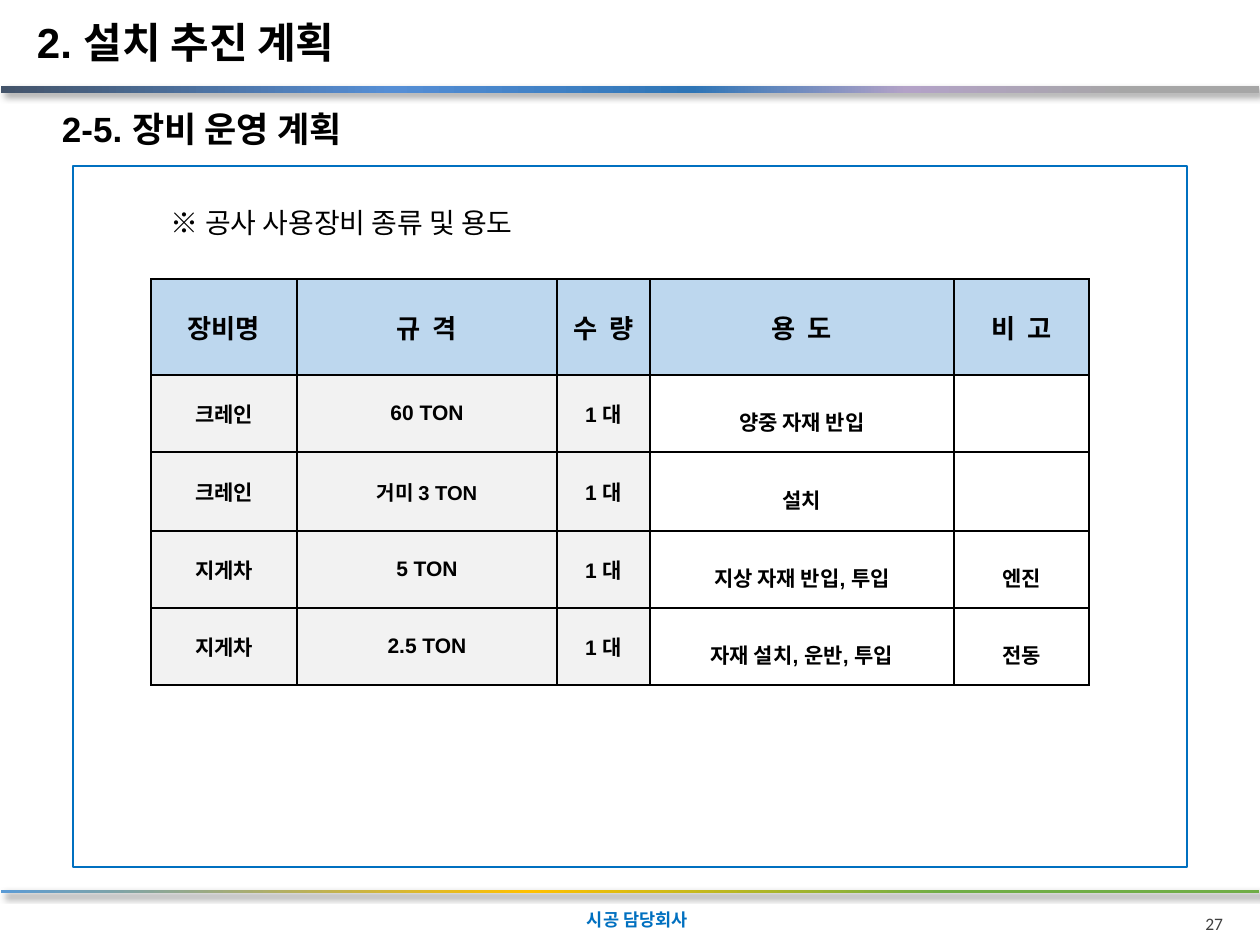
"""Build the equipment operation plan slide."""
from lxml import etree
from pptx import Presentation
from pptx import util as u
from pptx.dml.color import RGBColor
from pptx.enum import shapes, text
from pptx.oxml.ns import qn

SCALE = 914400 / 126
KOREAN = "Noto Sans CJK KR"
COLORS = {
    "black": "000000", "blue": "0070C0", "gray": "404040",
    "header": "BDD7EE", "label": "F2F2F2", "plain": "FFFFFF",
}
BARS = [
    ((1, 86, 1258, 7), [(0, "44546A"), (31, "558ED5"), (55, "2E75B6"), (72, "B3A2C7"), (90, "A6A6A6")]),
    ((1, 890, 1258, 3), [(0, "5B9BD5"), (42, "FFC000"), (75, "70AD47")]),
]
FRAME = (73, 166, 1114, 701)
MIDDLE, TOP = text.MSO_ANCHOR.MIDDLE, text.MSO_ANCHOR.TOP
LEFT, CENTER, RIGHT = text.PP_ALIGN.LEFT, text.PP_ALIGN.CENTER, text.PP_ALIGN.RIGHT
LABELS = [
    {"words": "시공 담당회사", "box": (583, 900, 275, 40), "size": 10, "font": KOREAN,
     "color": "blue", "bold": True, "anchor": MIDDLE, "inset": (4, 4)},
    {"words": "2. 설치 추진 계획", "box": (24, 0, 464, 84), "size": 24, "bold": True,
     "anchor": MIDDLE, "wrap": False},
    {"words": "2-5. 장비 운영 계획", "box": (49, 101, 339, 55), "size": 20, "bold": True,
     "wrap": False},
    {"words": "27", "box": (1076, 907, 160, 27), "size": 10, "font": "Calibri",
     "color": "gray", "align": RIGHT},
    {"words": "※ 공사 사용장비 종류 및 용도", "box": (151, 199, 591, 47), "size": 16,
     "inset": (20, 6)},
]
TABLE_LEFT, TABLE_TOP = 151, 279
COLUMNS = [146, 260, 93, 304, 135]
ROWS = [96, 77, 79, 77, 77]
EQUIPMENT = [
    ("장비명", "규  격", "수  량", "용  도", "비  고"),
    ("크레인", "60 TON", "1 대", "양중 자재 반입", ""),
    ("크레인", "거미 3 TON", "1 대", "설치", ""),
    ("지게차", "5 TON", "1 대", "지상 자재 반입, 투입", "엔진"),
    ("지게차", "2.5 TON", "1 대", "자재 설치, 운반, 투입", "전동"),
]
SIZES = {"거미 3 TON": 11.5}


def px(value):
    return u.Emu(round(value * SCALE))


def place(box):
    return [px(value) for value in box]


def add_color(parent, color):
    return etree.SubElement(parent, qn("a:srgbClr"), val=color)


def style(paragraph, size, font="Arial", color="black", bold=False):
    for run in paragraph.runs:
        run.font.size = u.Pt(size)
        run.font.bold = bold
        run.font.name = font
        run.font.color.rgb = RGBColor.from_string(COLORS[color])
        etree.SubElement(run.font._element, qn("a:ea"), typeface=KOREAN)


def add_label(slide, words, box, size, font="Arial", color="black", bold=False,
              anchor=TOP, align=LEFT, wrap=True, inset=(13, 6)):
    frame = slide.shapes.add_textbox(*place(box)).text_frame
    frame.text = words
    frame.word_wrap = wrap
    frame.vertical_anchor = anchor
    frame.margin_left, frame.margin_top = place(inset)
    frame.margin_right, frame.margin_bottom = px(min(inset[0], 13)), px(inset[1])
    frame.paragraphs[0].alignment = align
    style(frame.paragraphs[0], size, font, color, bold)


def add_rectangle(slide, box):
    shape = slide.shapes.add_shape(shapes.MSO_SHAPE.RECTANGLE, *place(box))
    shape.shadow.inherit = False
    return shape


def add_bar(slide, box, stops):
    shape = add_rectangle(slide, box)
    shape.line.fill.background()
    shape.fill.gradient()
    shape.fill.gradient_angle = 0
    properties = shape._element.spPr
    stop_list = properties.find(".//" + qn("a:gsLst"))
    for stop in list(stop_list):
        stop_list.remove(stop)
    for position, color in stops:
        add_color(etree.SubElement(stop_list, qn("a:gs"), pos=str(position * 1000)), color)
    shadow = etree.SubElement(
        properties.find(qn("a:effectLst")), qn("a:outerShdw"), blurRad=str(u.Pt(4)),
        dist=str(u.Pt(3)), dir="2700000", algn="tl", rotWithShape="0")
    etree.SubElement(add_color(shadow, COLORS["black"]), qn("a:alpha"), val="40000")


def add_borders(cell):
    properties = cell._tc.get_or_add_tcPr()
    for index, side in enumerate(("lnL", "lnR", "lnT", "lnB")):
        line = etree.Element(qn("a:" + side), w=str(u.Pt(1)))
        add_color(etree.SubElement(line, qn("a:solidFill")), COLORS["black"])
        properties.insert(index, line)


def fill_cell(cell, words, row, column):
    kind = "header" if row == 0 else "label" if column < 3 else "plain"
    cell.fill.solid()
    cell.fill.fore_color.rgb = RGBColor.from_string(COLORS[kind])
    cell.vertical_anchor = MIDDLE
    cell.margin_left = cell.margin_right = px(9)
    cell.margin_top = cell.margin_bottom = px(5)
    cell.text = words
    paragraph = cell.text_frame.paragraphs[0]
    paragraph.alignment = CENTER
    if kind == "plain":
        paragraph.line_spacing = 1.5
    style(paragraph, 15 if row == 0 else SIZES.get(words, 12), bold=True)
    add_borders(cell)


def add_equipment(slide):
    box = (TABLE_LEFT, TABLE_TOP, sum(COLUMNS), sum(ROWS))
    table = slide.shapes.add_table(len(ROWS), len(COLUMNS), *place(box)).table
    for column, width in zip(table.columns, COLUMNS):
        column.width = px(width)
    for row, height in zip(table.rows, ROWS):
        row.height = px(height)
    for row, entries in enumerate(EQUIPMENT):
        for column, words in enumerate(entries):
            fill_cell(table.cell(row, column), words, row, column)


def main():
    presentation = Presentation()
    presentation.slide_width, presentation.slide_height = px(1260), px(945)
    slide = presentation.slides.add_slide(presentation.slide_layouts[6])
    for box, stops in BARS:
        add_bar(slide, box, stops)
    frame = add_rectangle(slide, FRAME)
    frame.fill.background()
    frame.line.color.rgb = RGBColor.from_string(COLORS["blue"])
    frame.line.width = u.Pt(1)
    add_equipment(slide)
    for label in LABELS:
        add_label(slide, **label)
    presentation.save("out.pptx")


if __name__ == "__main__":
    main()
